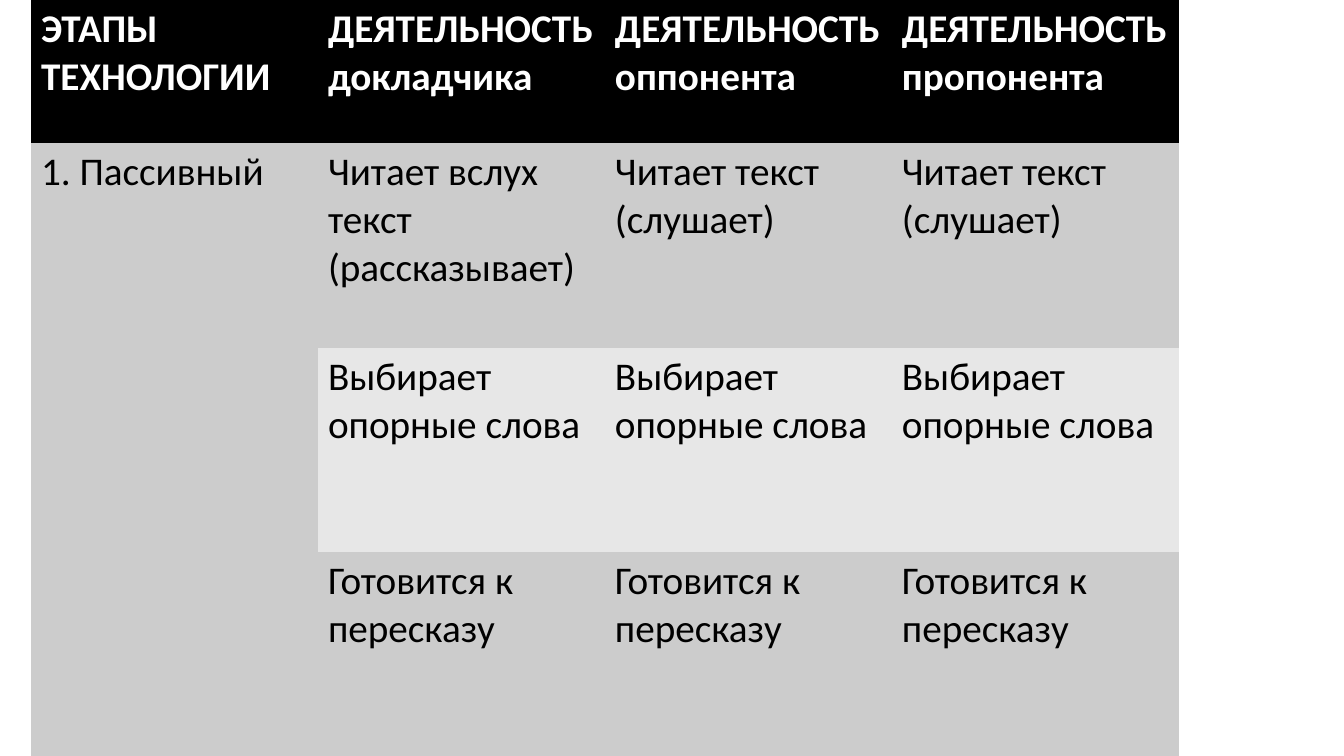
from pptx import Presentation
from pptx import util as u
from pptx.dml import color

PX = 914400 / 100.8


def px(length):
    return u.Emu(round(length * PX))


def rgb(value):
    return color.RGBColor.from_string(value)


ROWS = [
    ["ЭТАПЫ ТЕХНОЛОГИИ", "ДЕЯТЕЛЬНОСТЬ докладчика",
     "ДЕЯТЕЛЬНОСТЬ оппонента", "ДЕЯТЕЛЬНОСТЬ пропонента"],
    ["1. Пассивный", "Читает вслух текст (рассказывает)",
     "Читает текст (слушает)", "Читает текст (слушает)"],
    ["", *["Выбирает опорные слова"] * 3],
    ["", *["Готовится к пересказу"] * 3],
]
ROW_HEIGHTS = [143, 205, 204, 204]
ROW_FILLS = ["000000", "CCCCCC", "E7E7E7", "CCCCCC"]
COLUMN_WIDTH = 287
NO_STYLE = "{2D5ABB26-0587-4C30-8999-92F81FD0307C}"

deck = Presentation()
deck.slide_width, deck.slide_height = px(1344), px(756)
page = deck.slides.add_slide(deck.slide_layouts[6])

frame = page.shapes.add_table(4, 4, px(31), px(0), px(4 * COLUMN_WIDTH), px(sum(ROW_HEIGHTS)))
stages = frame.table
stages.horz_banding = False
stages._tbl.tblPr.find("{*}tableStyleId").text = NO_STYLE

for column in stages.columns:
    column.width = px(COLUMN_WIDTH)

for r, (texts, height, fill) in enumerate(zip(ROWS, ROW_HEIGHTS, ROW_FILLS)):
    stages.rows[r].height = px(height)
    header = r == 0
    look = {"name": "Calibri", "size": u.Pt(28), "bold": header}
    for c, wording in enumerate(texts):
        cell = stages.cell(r, c)
        cell.fill.solid()
        cell.fill.fore_color.rgb = rgb(fill)
        if not wording:
            continue
        span = cell.text_frame.paragraphs[0].add_run()
        span.text = wording
        for name, value in look.items():
            setattr(span.font, name, value)
        span.font.color.rgb = rgb("FFFFFF" if header else "000000")

stages.cell(1, 0).merge(stages.cell(3, 0))

deck.save("out.pptx")
